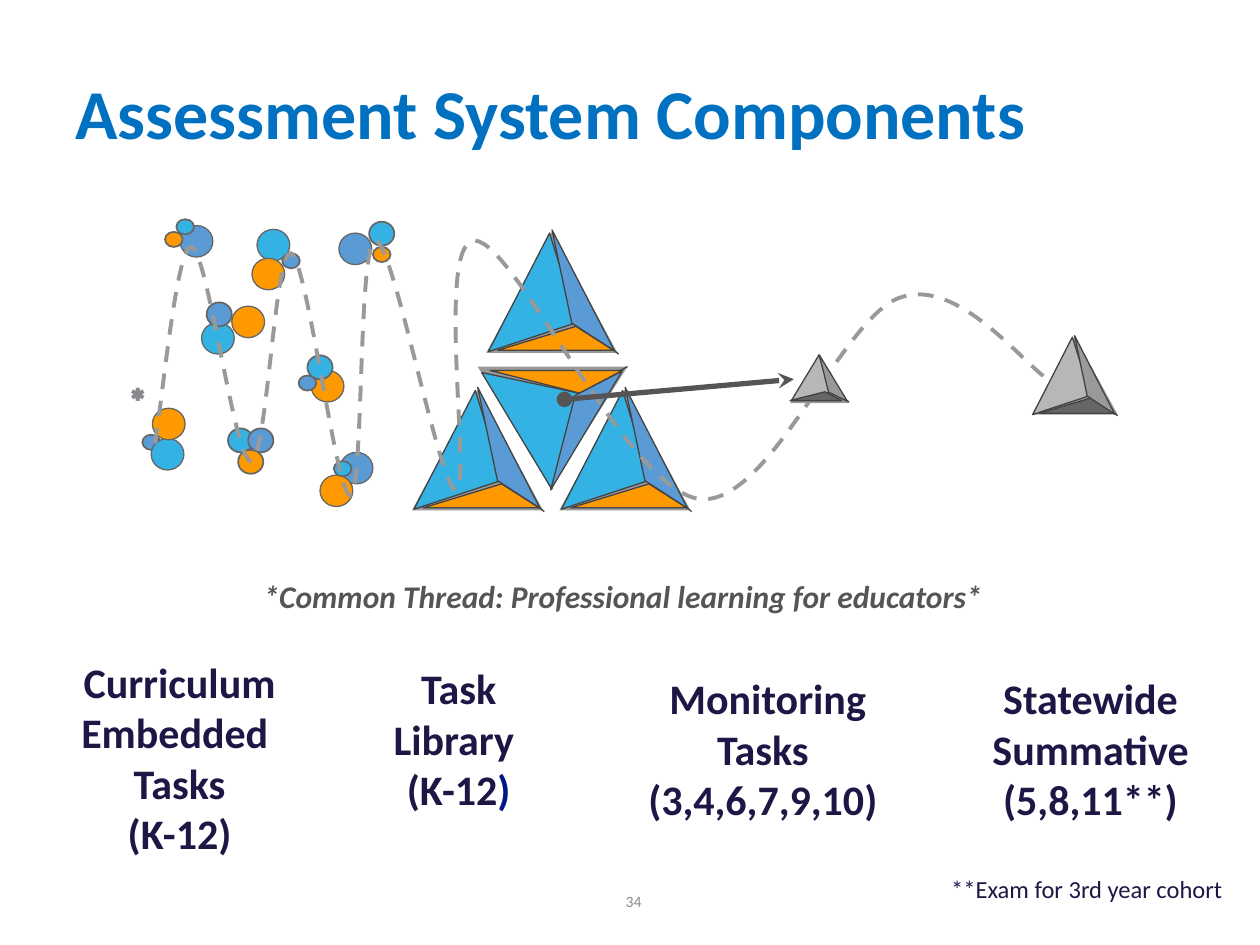
from dataclasses import dataclass

from lxml.etree import SubElement
from pptx import Presentation
from pptx.dml.color import RGBColor
from pptx.enum.dml import MSO_LINE_DASH_STYLE as Dash
from pptx.enum.shapes import MSO_CONNECTOR as Conn, MSO_SHAPE as Shape
from pptx.enum.text import MSO_ANCHOR as Anchor, PP_ALIGN as Align
from pptx.oxml.ns import qn
from pptx.util import Pt

PX = 9144  # EMU per px, 100 px to the inch


@dataclass(frozen=True)
class Theme:
    font: str = "Calibri"
    star_font: str = "TeX Gyre Adventor"
    title: str = "0070C0"
    label: str = "1F1646"
    accent: str = "001689"
    thread: str = "555555"
    star: str = "8A8992"
    number: str = "8C8C8C"
    sky: str = "34B2E3"
    blue: str = "5B9BD5"
    orange: str = "FF9900"
    light: str = "B7B7B7"
    grey: str = "999999"
    dark: str = "666666"
    edge: str = "434343"
    title_size: int = 40
    label_size: int = 24
    thread_size: int = 18
    note_size: int = 14
    number_size: int = 9


T = Theme()
COLOURED = (T.sky, T.orange, T.blue)
GREYS = (T.light, T.dark, T.grey)

# Pyramid parts relative to its corner: base, left, bottom and right face, crease
LARGE = ((0, 0, 104, 96), (-4, 34, 106, 52), (9, 75, 92, 19), (14, 41, 108, 20), (72, 72, 105, 97))
MEDIUM = [[round(v * 0.65) for v in part] for part in LARGE]
SMALL = ((0, 0, 47, 37), (1, 11, 42, 23), (0, 28, 41, 7), (9, 15, 43, 9), (33, 27, 47, 36))

# Dots: width, height, outline in points
DOT = {"L": (26, 25, 0.75), "M": (20, 19, 1), "S": (14, 12, 1)}
DOTS = [
    (270, 359, "L", T.blue), (254, 377, "L", T.orange), (265, 366, "S", T.sky),
    (143, 179, "L", T.blue), (131, 184, "S", T.orange), (140, 174, "S", T.sky),
    (247, 294, "L", T.orange), (237, 298, "S", T.blue), (244, 282, "M", T.sky),
    (204, 182, "L", T.sky), (200, 205, "L", T.orange), (224, 201, "S", T.blue),
    (293, 176, "M", T.sky), (269, 185, "L", T.blue), (296, 196, "S", T.orange),
    (113, 345, "S", T.blue), (120, 348, "L", T.sky), (121, 324, "L", T.orange),
    (181, 340, "M", T.sky), (197, 340, "M", T.blue), (189, 357, "M", T.orange),
    (184, 243, "L", T.orange), (160, 256, "L", T.sky), (164, 240, "M", T.blue),
]

# Thread: start, then two control points and an end for each curve
THREAD = [
    (123, 352),
    (128, 326), (140, 194), (152, 196), (165, 199), (186, 365), (199, 366),
    (212, 367), (218, 196), (231, 201), (244, 206), (267, 395), (278, 393),
    (289, 392), (284, 192), (298, 191), (312, 190), (349, 389), (362, 389),
    (375, 389), (345, 190), (377, 191), (409, 192), (498, 389), (555, 396),
    (611, 403), (668, 251), (715, 236), (761, 220), (814, 291), (833, 302),
]

LABELS = [
    (-2, 517, 289, 179, ["Curriculum Embedded ", "Tasks", "(K-12)"]),
    (253, 522, 222, 130, ["Task", "Library ", [("(K-12", T.label), (")", T.accent)]]),
    (478, 530, 255, 179, [" Monitoring Tasks", "(3,4,6,7,9,10)"]),
    (778, 530, 175, 130, ["Statewide Summative (5,8,11**)"]),
]


def rgb(value):
    return RGBColor.from_string(value)


class Canvas:
    def __init__(self, s, theme):
        self.s, self.t = s, theme

    def run(self, p, text, size, color, bold=False, italic=False, font=None):
        r = p.add_run()
        r.text = text
        f = r.font
        f.name, f.size, f.bold, f.italic = font or self.t.font, Pt(size), bold, italic
        f.color.rgb = rgb(color)

    def title(self, x, y, w, h, text):
        sp = self.s.shapes.title
        sp.left, sp.top, sp.width, sp.height = (v * PX for v in (x, y, w, h))
        tf = sp.text_frame
        tf.vertical_anchor = Anchor.MIDDLE
        p = tf.paragraphs[0]
        p.alignment, p.line_spacing = Align.LEFT, 0.9
        self.run(p, text, self.t.title_size, self.t.title, bold=True)

    def text(self, x, y, w, h, paragraphs, size, color, align=Align.CENTER,
             inset=(7, 4), anchor=Anchor.TOP, **style):
        tf = self.s.shapes.add_textbox(x * PX, y * PX, w * PX, h * PX).text_frame
        tf.word_wrap, tf.vertical_anchor = True, anchor
        tf.margin_left = tf.margin_right = inset[0] * PX
        tf.margin_top = tf.margin_bottom = inset[1] * PX
        for i, runs in enumerate(paragraphs):
            p = tf.add_paragraph() if i else tf.paragraphs[0]
            p.alignment = align
            for text, c in [(runs, color)] if isinstance(runs, str) else runs:
                self.run(p, text, size, c, **style)

    def shape(self, kind, x, y, w, h, fill, line=None, width=0.75, rot=0, flip=False, apex=None):
        sp = self.s.shapes.add_shape(kind, x * PX, y * PX, w * PX, h * PX)
        sp.shadow.inherit = False
        sp.fill.solid()
        sp.fill.fore_color.rgb = rgb(fill)
        if line:
            sp.line.color.rgb, sp.line.width = rgb(line), Pt(width)
        else:
            sp.line.fill.background()
        sp.rotation = rot
        if flip:
            sp._element.spPr.get_or_add_xfrm().set("flipH", "1")
        if apex:
            sp.adjustments[0] = apex

    def dot(self, x, y, size, color):
        w, h, width = DOT[size]
        self.shape(Shape.OVAL, x, y, w, h, color, self.t.dark, width)

    def face(self, box, fill, **options):
        self.shape(Shape.ISOSCELES_TRIANGLE, *box, fill, self.t.edge, **options)

    def line(self, x1, y1, x2, y2, color, width=0.75, ends=()):
        cx = self.s.shapes.add_connector(Conn.STRAIGHT, x1 * PX, y1 * PX, x2 * PX, y2 * PX)
        cx.line.color.rgb, cx.line.width = rgb(color), Pt(width)
        ln = cx.line._get_or_add_ln()
        for tag, kind in zip(("a:headEnd", "a:tailEnd"), ends):
            SubElement(ln, qn(tag), type=kind)
        SubElement(cx._element.spPr, qn("a:effectLst"))

    def pyramid(self, x, y, parts, colors, tilt):
        base, left, bottom, right = [(x + a, y + b, w, h) for a, b, w, h in parts[:4]]
        x1, y1, x2, y2 = parts[4]
        self.shape(Shape.ISOSCELES_TRIANGLE, *base, self.t.grey)
        self.face(left, colors[0], rot=tilt)
        self.line(x + x1, y + y1, x + x2, y + y2, self.t.edge)
        self.face(bottom, colors[1], apex=0.675)
        self.face(right, colors[2], rot=360 - tilt, flip=True, apex=0.675)

    def curve(self, points, color, width):
        fb = self.s.shapes.build_freeform(*points[0], scale=PX)
        fb.add_line_segments(points[1:], close=False)
        sp = fb.convert_to_shape()
        sp.shadow.inherit = False
        sp.fill.background()
        sp.line.color.rgb, sp.line.width = rgb(color), Pt(width)
        sp.line.dash_style = Dash.DASH
        # Each three straight segments become one Bezier curve
        segments = list(sp._element.iter(qn("a:lnTo")))
        outline = segments[0].getparent()
        for i in range(0, len(segments), 3):
            bezier = SubElement(outline, qn("a:cubicBezTo"))
            for segment in segments[i:i + 3]:
                bezier.append(segment[0])
                outline.remove(segment)


def main():
    prs = Presentation()
    prs.slide_width, prs.slide_height = 1000 * PX, 750 * PX
    c = Canvas(prs.slides.add_slide(prs.slide_layouts[5]), T)

    # Title, labels and notes
    c.title(50, 30, 900, 125, "Assessment System Components")
    for *box, lines in LABELS:
        c.text(*box, lines, T.label_size, T.label, bold=True)
    c.text(146, 454, 697, 76, ["*Common Thread: Professional learning for educators*"],
           T.thread_size, T.thread, bold=True, italic=True)
    c.text(86, 292, 47, 46, ["*"], T.thread_size, T.star, inset=(10, 10),
           bold=True, font=T.star_font)
    c.text(745, 684, 241, 34, ["**Exam for 3rd year cohort"], T.note_size, T.label,
           align=Align.LEFT, inset=(10, 10))
    c.text(294, 695, 225, 40, ["34"], T.number_size, T.number, align=Align.RIGHT,
           inset=(10, 5), anchor=Anchor.MIDDLE)

    # Curriculum embedded tasks
    for dot in DOTS:
        c.dot(*dot)

    # Task library: inverted pyramid among three upright ones
    c.shape(Shape.ISOSCELES_TRIANGLE, 379, 291, 119, 94, T.grey, rot=180, flip=True)
    c.face((381, 298, 108, 58), T.sky, rot=59, flip=True)
    c.line(459, 312, 498, 291, T.edge)
    c.face((389, 294, 105, 18), T.orange, rot=180, flip=True, apex=0.675)
    c.face((401, 325, 110, 22), T.blue, rot=301, apex=0.675)
    for x, y in ((327, 309), (444, 309), (386, 184)):
        c.pyramid(x, y, LARGE, COLOURED, 117.3)

    # Statewide summative, common thread, monitoring tasks
    c.pyramid(819, 267, MEDIUM, GREYS, 117.1)
    c.curve(THREAD, T.grey, 2.25)
    c.pyramid(627, 283, SMALL, GREYS, 121.2)
    c.line(448, 317, 630, 301, T.thread, 3, ends=("oval", "stealth"))

    prs.save("out.pptx")


if __name__ == "__main__":
    main()
